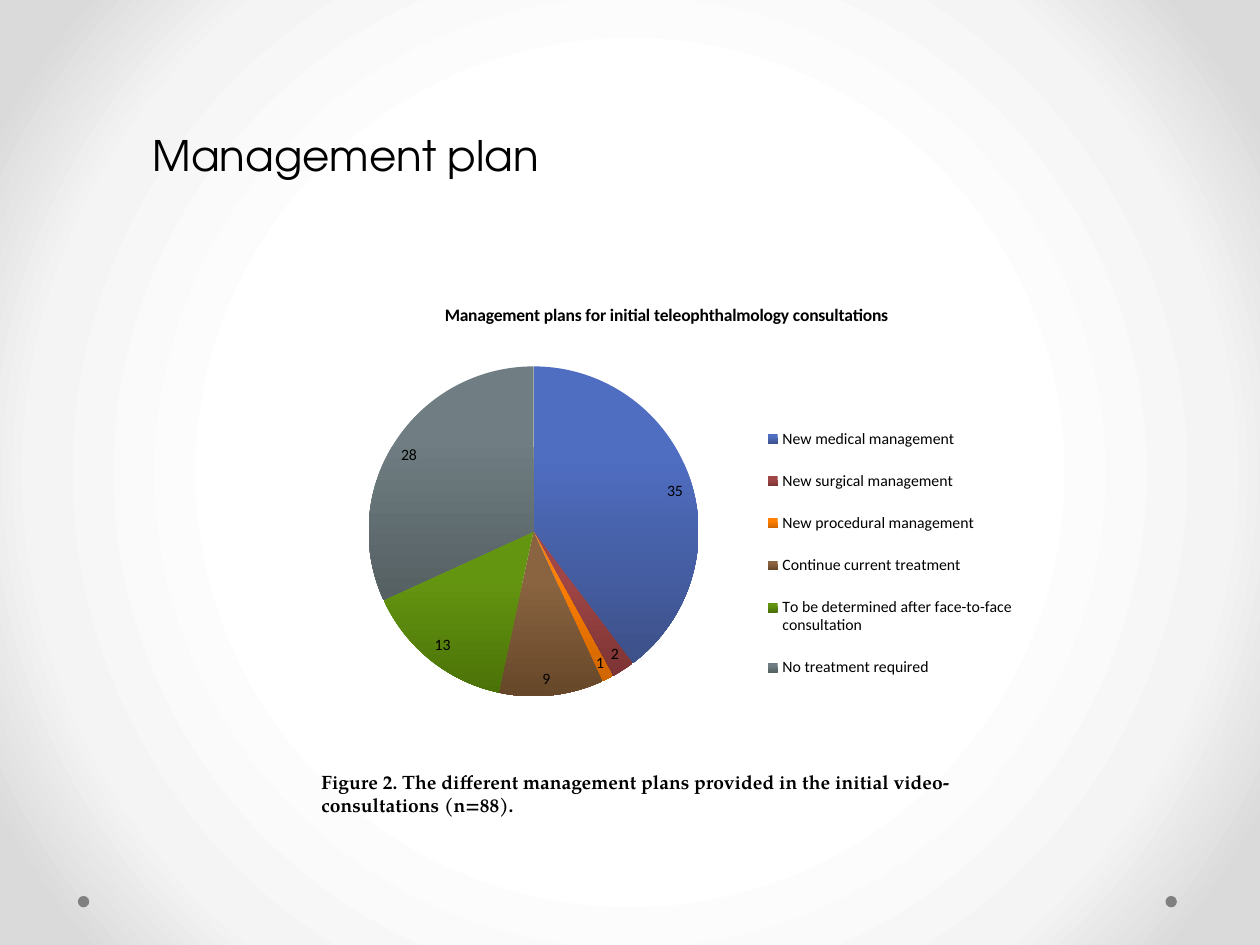
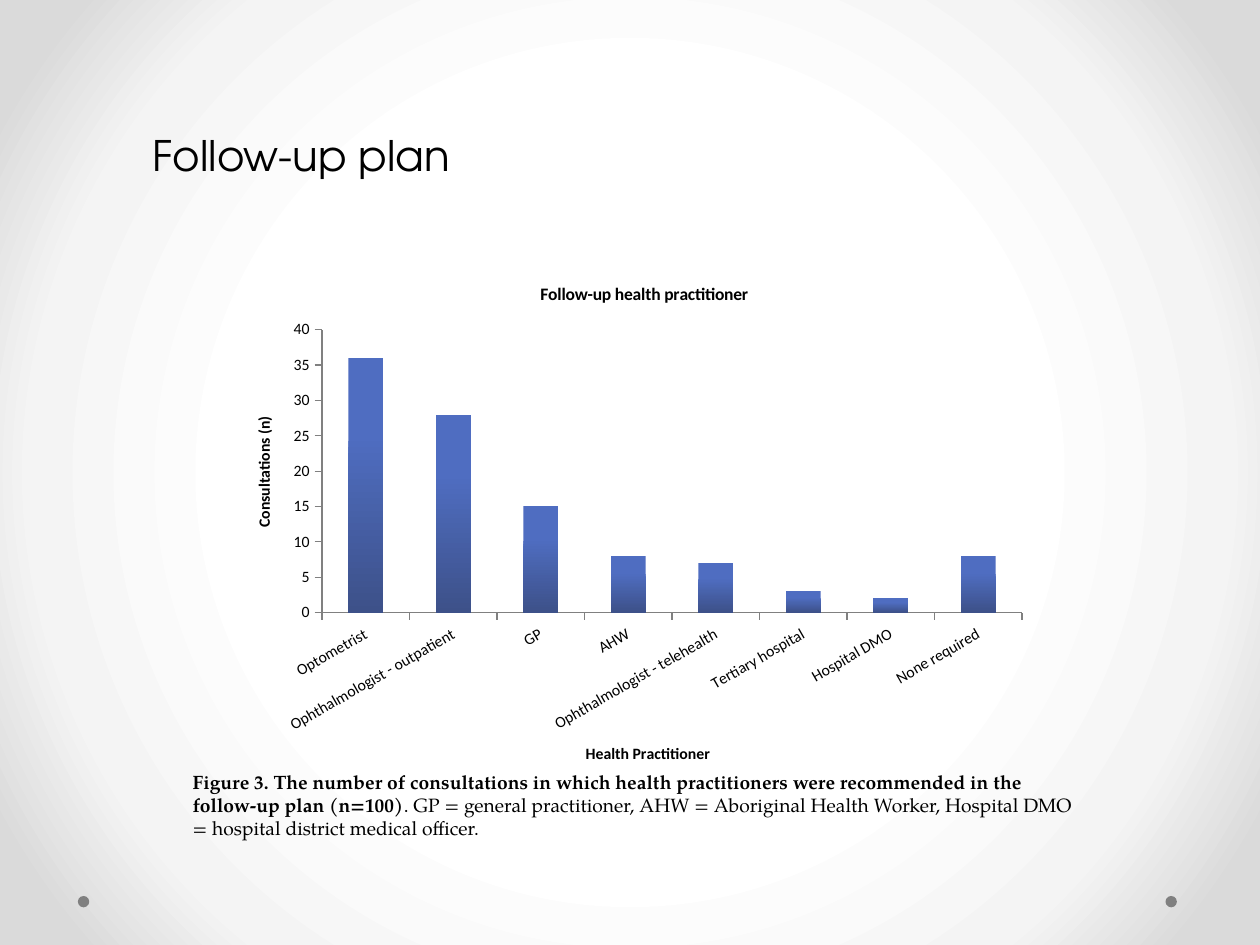
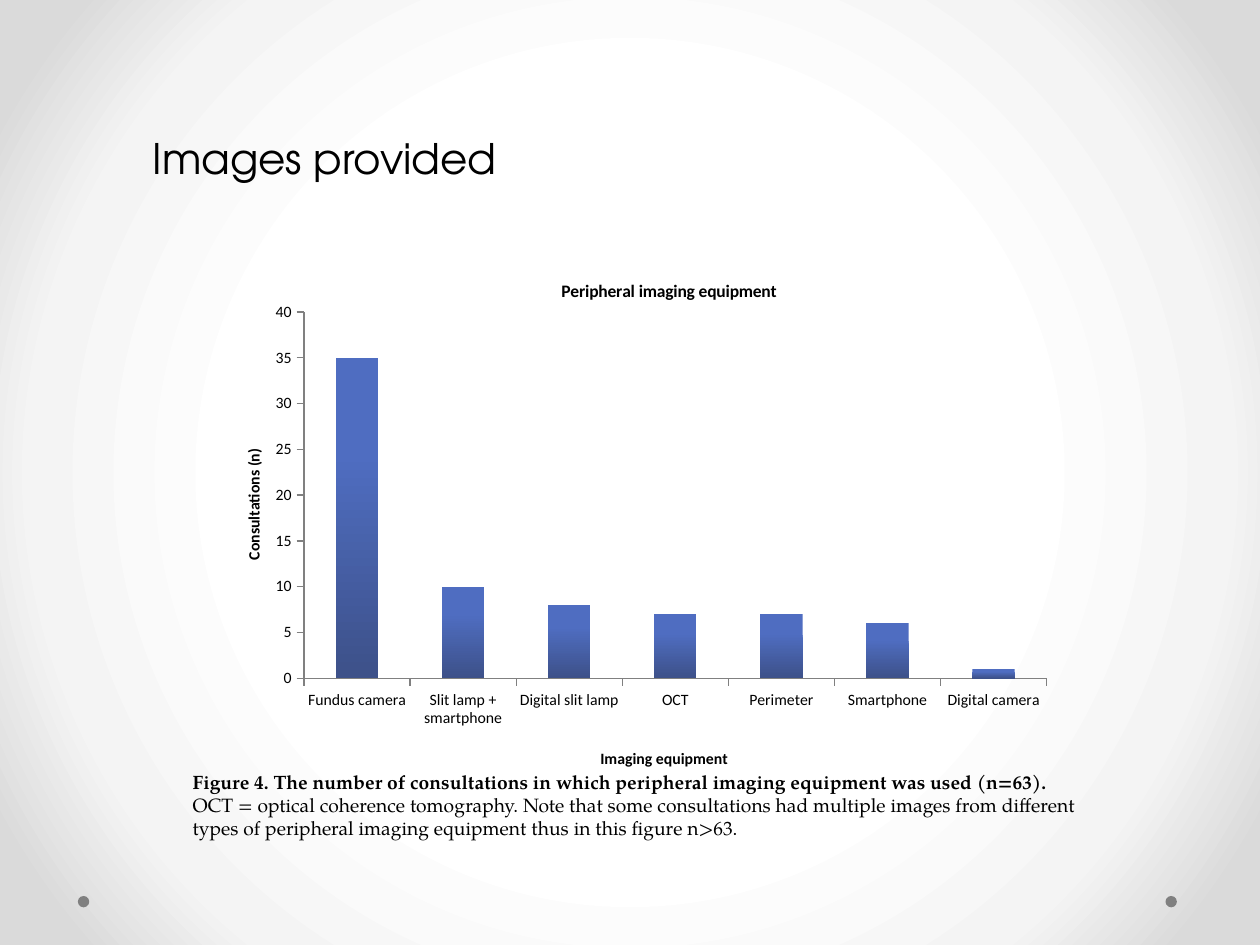
from dataclasses import dataclass
from typing import Any

import pptx
import pptx.chart.data
import pptx.dml.color
import pptx.enum.chart
import pptx.enum.dml
import pptx.enum.shapes
import pptx.enum.text
import pptx.oxml
import pptx.oxml.ns
import pptx.util

Pt = pptx.util.Pt
KIND = pptx.enum.chart.XL_CHART_TYPE
BLACK, GREY = "000000", "808080"
HEAD = {"name": "TeX Gyre Adventor", "size": Pt(24), "bold": False}
BODY = {"name": "TeX Gyre Pagella", "size": Pt(11)}
LABEL = {"name": "Calibri", "size": Pt(9), "bold": False}
BOLD = {"name": "Calibri", "size": Pt(9), "bold": True}
TITLE = {"name": "Calibri", "size": Pt(10), "bold": True}

# Top and bottom shade of each gradient fill
BLUE = ("4F6DC1", "3D5189")
SLICES = [BLUE, ("A14646", "7D3434"), ("FF8000", "D06500"),
          ("8A6440", "664729"), ("649510", "4B7208"), ("707D82", "556063")]
STOPS = [(50, "FFFFFF"), (76, "F4F4F4"), (92, "DADADA")]
DOTS = [44.5, 666]

Box = tuple[float, float, float, float]
Spot = tuple[float, float]


@dataclass
class Graph:
    title: str
    data: dict[str, int]
    box: Box
    plot: Box
    spot: Spot


@dataclass
class Bars(Graph):
    names: tuple[str, str]
    spots: tuple[Spot, Spot]
    turn: int = 0


@dataclass
class Page:
    title: str
    place: Box
    graph: Graph
    note: list[list[tuple[str, bool]]]
    area: Box


WIDE = (103, 436.5, 523, 47.5)
PAGES = [
    Page("Management plan", (80, 70.5, 237.5, 36),
         Graph("Management plans for initial teleophthalmology consultations",
               {"New medical management": 35,
                "New surgical management": 2,
                "New procedural management": 1,
                "Continue current treatment": 9,
                "To be determined after face-to-face consultation": 13,
                "No treatment required": 28},
               (162, 158.5, 430.5, 263), (.113, .162, .438, .78), (.21, .05)),
         [[("Figure 2. The different management plans provided in the initial "
            "video-consultations (n=88).", True)]],
         (176.5, 436.5, 417, 34)),
    Page("Follow-up plan", (80, 70.5, 186.5, 36),
         Bars("Follow-up health practitioner",
              {"Optometrist": 36, "Ophthalmologist - outpatient": 28,
               "GP": 15, "AHW": 8, "Ophthalmologist - telehealth": 7,
               "Tertiary hospital": 3, "Hospital DMO": 2, "None required": 8},
              (129, 146, 474.5, 301), (.116, .141, .843, .537), (.375, .045),
              ("Health Practitioner", "Consultations (n)"),
              ((.43, .92), (.03, .3)), -30),
         [[("Figure 3. The number of consultations in which health "
            "practitioners were recommended in the follow-up plan (n=100)",
            True),
           (". GP = general practitioner, AHW = Aboriginal Health Worker, "
            "Hospital DMO = hospital district medical officer.", False)]],
         WIDE),
    Page("Images provided", (80, 72, 214.5, 36),
         Bars("Peripheral imaging equipment",
              {"Fundus camera": 35, "Slit lamp + smartphone": 10,
               "Digital slit lamp": 8, "OCT": 7, "Perimeter": 7,
               "Smartphone": 6, "Digital camera": 1},
              (120, 129, 497.5, 322.5), (.108, .153, .853, .649), (.4, .09),
              ("Imaging equipment", "Consultations (n)"),
              ((.445, .92), (.035, .39))),
         [[("Figure 4. The number of consultations in which peripheral "
            "imaging equipment was used (n=63).", True)],
          [("OCT = optical coherence tomography. Note that some consultations "
            "had multiple images from different types of peripheral imaging "
            "equipment thus in this figure n>63.", False)]],
         WIDE),
]


def tint(color: Any, code: str) -> None:
    color.rgb = pptx.dml.color.RGBColor.from_string(code)


def put(item: Any, **vals: Any) -> None:
    for key, val in vals.items():
        setattr(item, key, val)


def style(font: Any, form: dict[str, Any]) -> None:
    put(font, **form)
    tint(font.color, BLACK)


def points(box: Box) -> list[int]:
    return [Pt(side) for side in box]


def shade(fill: Any, pair: tuple[str, str]) -> None:
    """Fill from top to bottom, holding the top shade for a while."""
    fill.gradient()
    fill.gradient_angle = 270
    for stop, code, at in zip(fill.gradient_stops, pair, (.3, 1)):
        tint(stop.color, code)
        stop.position = at


def pin(node: Any, index: int, *spot: float, inner: bool = False) -> None:
    """Give a chart part a place in fractions of the chart."""
    for old in node.xpath("c:layout"):
        node.remove(old)
    aim = '<c:layoutTarget val="inner"/>' if inner else ""
    modes = '<c:xMode val="edge"/><c:yMode val="edge"/>'
    vals = "".join(f'<c:{key} val="{val}"/>' for key, val in zip("xywh", spot))
    node.insert(index, pptx.oxml.parse_xml(
        f'<c:layout {pptx.oxml.ns.nsdecls("c")}><c:manualLayout>'
        f"{aim}{modes}{vals}</c:manualLayout></c:layout>"))


def label(title: Any, text: str, form: dict[str, Any], spot: Spot) -> None:
    title.text_frame.text = text
    style(title.text_frame.paragraphs[0].runs[0].font, form)
    pin(title.element, 1, *spot)


def pie(chart: Any) -> None:
    plot = chart.plots[0]
    plot.vary_by_categories = True
    for index, pair in enumerate(SLICES):
        shade(plot.series[0].points[index].format.fill, pair)
    plot.has_data_labels = True
    put(plot.data_labels, show_value=True, show_percentage=False,
        position=pptx.enum.chart.XL_LABEL_POSITION.INSIDE_END)
    style(plot.data_labels.font, LABEL)
    chart.has_legend = True
    put(chart.legend, include_in_layout=False,
        position=pptx.enum.chart.XL_LEGEND_POSITION.RIGHT)
    style(chart.legend.font, LABEL)
    pin(chart.element.xpath(".//c:legend")[0], 1, .63, .28, .35, .64)


def bars(chart: Any, graph: Bars) -> None:
    put(chart.plots[0], gap_width=150, vary_by_categories=False)
    shade(chart.plots[0].series[0].format.fill, BLUE)
    axes = chart.category_axis, chart.value_axis
    for axis, name, spot in zip(axes, graph.names, graph.spots):
        put(axis, has_major_gridlines=False, has_title=True,
            major_tick_mark=pptx.enum.chart.XL_TICK_MARK.OUTSIDE,
            minor_tick_mark=pptx.enum.chart.XL_TICK_MARK.NONE)
        axis.format.line.width = Pt(.75)
        tint(axis.format.line.color, GREY)
        style(axis.tick_labels.font, LABEL)
        label(axis.axis_title, name, BOLD, spot)
    put(chart.value_axis, minimum_scale=0, maximum_scale=40, major_unit=5)
    chart.value_axis.axis_title.element.xpath(".//a:bodyPr")[0].set(
        "rot", "-5400000")
    if graph.turn:
        body = chart.category_axis.tick_labels.font
        body = chart.element.xpath(".//c:catAx/c:txPr/a:bodyPr")[0]
        body.set("rot", str(graph.turn * 60000))
        body.set("vert", "horz")


def draw(slide: Any, graph: Graph) -> None:
    data = pptx.chart.data.CategoryChartData()
    data.categories = list(graph.data)
    data.add_series("Series 1", list(graph.data.values()))
    barred = isinstance(graph, Bars)
    kind = KIND.COLUMN_CLUSTERED if barred else KIND.PIE
    chart = slide.shapes.add_chart(kind, *points(graph.box), data).chart
    style(chart.font, LABEL)
    put(chart, has_title=True, has_legend=False)
    label(chart.chart_title, graph.title, TITLE, graph.spot)
    pin(chart.element.xpath(".//c:plotArea")[0], 0, *graph.plot, inner=True)
    if barred:
        bars(chart, graph)
    else:
        pie(chart)


def head(shape: Any, page: Page) -> None:
    left, top, width, height = points(page.place)
    put(shape, left=left, top=top, width=width, height=height)
    frame = shape.text_frame
    frame.text = page.title
    put(frame, word_wrap=False, auto_size=pptx.enum.text.MSO_AUTO_SIZE.NONE,
        vertical_anchor=pptx.enum.text.MSO_ANCHOR.TOP)
    frame.paragraphs[0].alignment = pptx.enum.text.PP_ALIGN.LEFT
    style(frame.paragraphs[0].runs[0].font, HEAD)


def note(slide: Any, page: Page) -> None:
    frame = slide.shapes.add_textbox(*points(page.area)).text_frame
    frame.word_wrap = True
    for index, runs in enumerate(page.note):
        para = frame.add_paragraph() if index else frame.paragraphs[0]
        for text, bold in runs:
            run = para.add_run()
            run.text = text
            style(run.font, BODY | {"bold": bold})


def backdrop(master: Any) -> None:
    base = master.element.cSld
    for old in base.xpath("p:bg"):
        base.remove(old)
    stops = "".join(f'<a:gs pos="{at * 1000}"><a:srgbClr val="{code}"/></a:gs>'
                    for at, code in STOPS)
    sides = " ".join(f'{side}="50000"' for side in "ltrb")
    base.insert(0, pptx.oxml.parse_xml(
        f'<p:bg {pptx.oxml.ns.nsdecls("p", "a")}><p:bgPr>'
        f'<a:gradFill rotWithShape="1"><a:gsLst>{stops}</a:gsLst>'
        f'<a:path path="circle"><a:fillToRect {sides}/></a:path></a:gradFill>'
        "<a:effectLst/></p:bgPr></p:bg>"))


def dots(slide: Any, master: Any) -> None:
    """Draw the footer dots and hand them over to the master."""
    for index, left in enumerate(DOTS):
        dot = slide.shapes.add_shape(pptx.enum.shapes.MSO_SHAPE.OVAL,
                                     *points((left, 512, 6.5, 6.5)))
        dot.shadow.inherit = False
        dot.fill.solid()
        tint(dot.fill.fore_color, GREY)
        dot.line.fill.background()
        dot.element.xpath(".//p:cNvPr")[0].set("id", str(50 + index))
        master.shapes.element.append(dot.element)


def main() -> None:
    deck = pptx.Presentation()
    put(deck, slide_width=Pt(720), slide_height=Pt(540))
    backdrop(deck.slide_master)
    for page in PAGES:
        slide = deck.slides.add_slide(deck.slide_layouts[5])
        head(slide.shapes.title, page)
        draw(slide, page.graph)
        note(slide, page)
    dots(deck.slides[0], deck.slide_master)
    deck.save("out.pptx")


if __name__ == "__main__":
    main()
